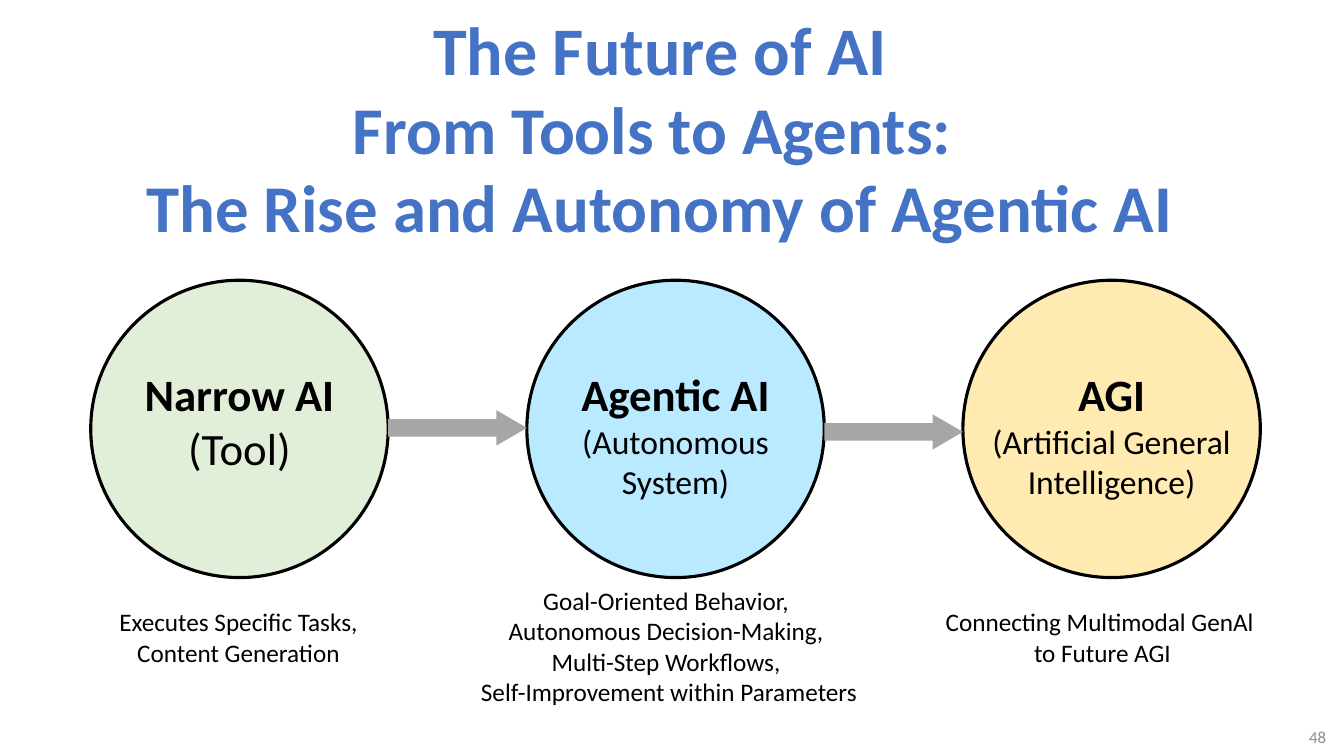
import pptx
import pptx.dml.color
import pptx.enum.shapes
import pptx.enum.text
import pptx.oxml.ns
import pptx.util
from lxml import etree

Inches = pptx.util.Inches
Pt = pptx.util.Pt
RGB = pptx.dml.color.RGBColor
ALIGN = pptx.enum.text.PP_ALIGN
ANCHOR = pptx.enum.text.MSO_ANCHOR
SHAPE = pptx.enum.shapes.MSO_SHAPE

BLUE = RGB(0x44, 0x72, 0xC4)
BLACK = RGB(0, 0, 0)
GRAY = RGB(0xA6, 0xA6, 0xA6)
PALE = RGB(0x8C, 0x8C, 0x8C)
GREEN = RGB(0xC5, 0xE0, 0xB4)
SKY = RGB(0x76, 0xD6, 0xFF)
GOLD = RGB(0xFF, 0xD9, 0x66)

WIDE, HIGH = 13.33, 7.5
LEFT, TOP = 0.9, 2.78
SIZE, STEP = 2.95, 4.325
GAP = STEP - SIZE

STAGES = [
    (GREEN, "Narrow AI", "(Tool)", 32, 1.18),
    (SKY, "Agentic AI", "(Autonomous System)", 24, 1.45),
    (GOLD, "AGI", "(Artificial General Intelligence)", 24, 1.45),
]
NOTES = [
    ((0.89, 5.97, 2.95, 0.71), "Executes Specific Tasks, Content Generation"),
    ((4.4, 5.76, 4.47, 1.31),
     "Goal-Oriented Behavior, \nAutonomous Decision-Making, \n"
     "Multi-Step Workflows, \nSelf-Improvement within Parameters"),
    ((9.14, 5.97, 3.59, 0.71), "Connecting Multimodal GenAl \nto Future AGI"),
]


def add_text(slide, box, paras, align=ALIGN.CENTER, anchor=ANCHOR.TOP, space=None):
    frame = slide.shapes.add_textbox(*map(Inches, box)).text_frame
    frame.word_wrap = True
    frame.vertical_anchor = anchor
    for i, runs in enumerate(paras):
        para = frame.paragraphs[0] if i == 0 else frame.add_paragraph()
        para.alignment = align
        if space:
            para.line_spacing = space
        for text, size, color, bold in runs:
            for j, line in enumerate(text.split("\n")):
                if j:
                    para.add_line_break()
                if line:
                    run = para.add_run()
                    run.text = line
                    run.font.name = "Calibri"
                    run.font.size = Pt(size)
                    run.font.bold = bold
                    run.font.color.rgb = color


def add_form(slide, kind, box, color):
    form = slide.shapes.add_shape(kind, *map(Inches, box))
    form.shadow.inherit = False
    form.fill.solid()
    form.fill.fore_color.rgb = color
    form.line.fill.background()
    return form


def add_title(slide, box):
    add_text(slide, box, [[
        ("The Future of AI\n", 48.6, BLUE, True),
        ("From Tools to Agents: \nThe Rise and Autonomy of Agentic AI", 47.7, BLUE, True),
    ]], anchor=ANCHOR.MIDDLE, space=0.98)


def add_stage(slide, left, top, size, stage):
    color, name, kind, points, high = stage
    disc = add_form(slide, SHAPE.OVAL, (left, top, size, size), color)
    disc.line.color.rgb = BLACK
    disc.line.width = Pt(2.25)
    tint = disc.fill._xPr.find(".//" + pptx.oxml.ns.qn("a:srgbClr"))
    etree.SubElement(tint, pptx.oxml.ns.qn("a:alpha"), val="50000")
    add_text(slide, (left, top + 0.81, size, high),
             [[(name, 32, BLACK, True)], [(kind, points, BLACK, False)]])


def add_arrow(slide, box):
    arrow = add_form(slide, SHAPE.RIGHT_ARROW, box, GRAY)
    arrow.adjustments[0] = 0.5
    arrow.adjustments[1] = 0.86


def add_flow(slide, left, top):
    for i, stage in enumerate(STAGES):
        add_stage(slide, left + i * STEP, top, SIZE, stage)
    for i, drop in enumerate((1.29, 1.33)):
        add_arrow(slide, (left + i * STEP + SIZE, top + drop, GAP, 0.35))


def main():
    deck = pptx.Presentation()
    deck.slide_width = Inches(WIDE)
    deck.slide_height = Inches(HIGH)
    slide = deck.slides.add_slide(deck.slide_layouts[6])
    add_title(slide, (0.89, 0.01, 11.31, 2.56))
    add_flow(slide, LEFT, TOP)
    for box, text in NOTES:
        add_text(slide, box, [[(text, 18, BLACK, False)]])
    add_text(slide, (12.2, 7.18, 1.05, 0.26), [[("48", 12, PALE, False)]],
             ALIGN.RIGHT, ANCHOR.MIDDLE)
    deck.save("out.pptx")


if __name__ == "__main__":
    main()
